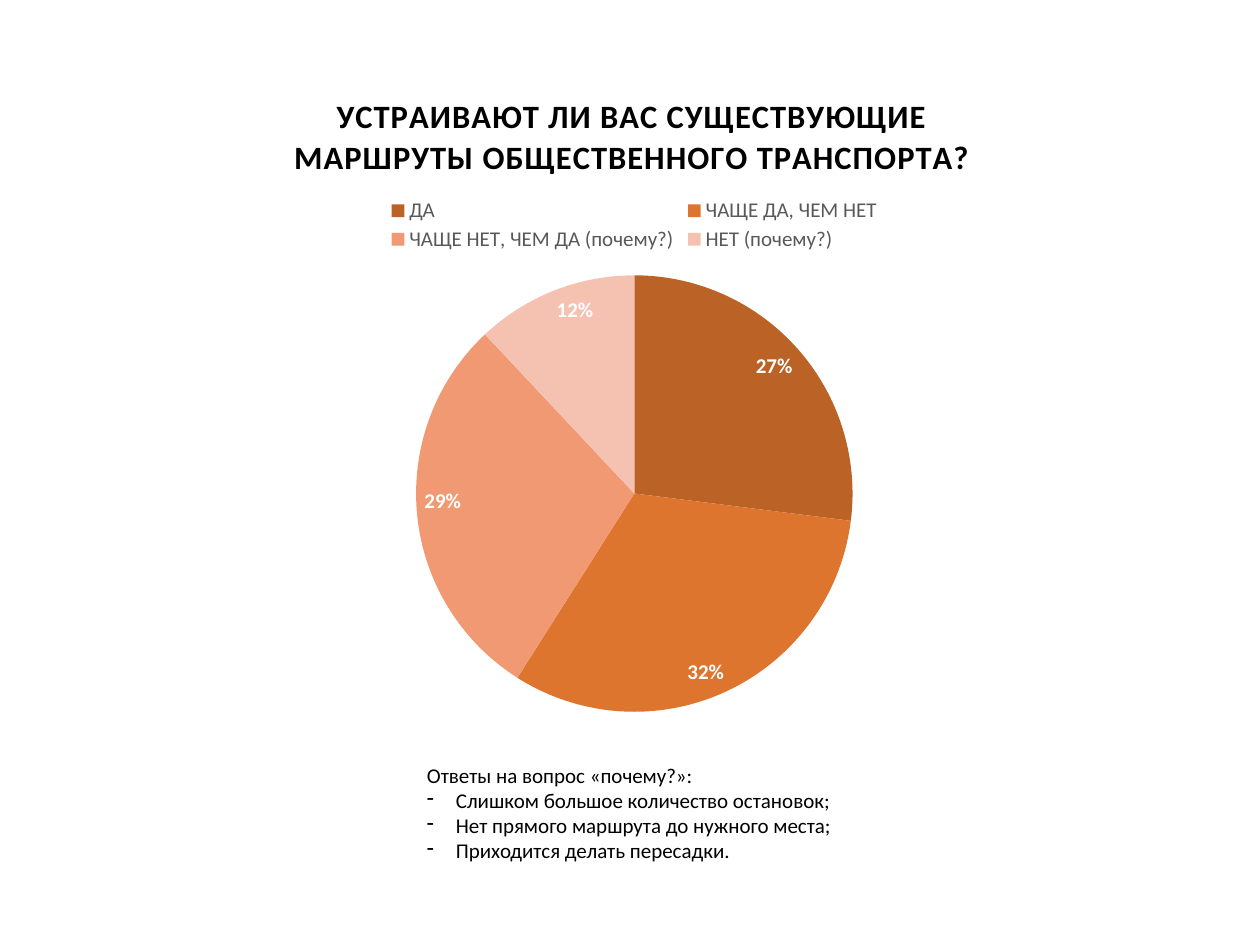
from typing import NamedTuple

from lxml.etree import SubElement
from pptx import Presentation
from pptx.chart.data import CategoryChartData
from pptx.dml.color import RGBColor
from pptx.enum.chart import XL_CHART_TYPE as Kind
from pptx.enum.chart import XL_LABEL_POSITION as LabelPos
from pptx.enum.chart import XL_LEGEND_POSITION as LegendPos
from pptx.enum.text import MSO_AUTO_SIZE as Fit
from pptx.oxml.ns import qn
from pptx.util import Inches, Pt

FONT = "Calibri"
BLACK = RGBColor(0x00, 0x00, 0x00)
GREY = RGBColor(0x59, 0x59, 0x59)
WHITE = RGBColor(0xFF, 0xFF, 0xFF)
RUST = RGBColor(0xBB, 0x63, 0x27)
ORANGE = RGBColor(0xDE, 0x75, 0x2E)
SALMON = RGBColor(0xF0, 0x99, 0x73)
PINK = RGBColor(0xF5, 0xC2, 0xB1)

TITLE = "УСТРАИВАЮТ ЛИ ВАС СУЩЕСТВУЮЩИЕ МАРШРУТЫ ОБЩЕСТВЕННОГО ТРАНСПОРТА?"
LEAD = "Ответы на вопрос «почему?»:"
REASONS = [
    "Слишком большое количество остановок;",
    "Нет прямого маршрута до нужного места;",
    "Приходится делать пересадки.",
]


class Slice(NamedTuple):
    name: str
    share: int
    color: RGBColor


SLICES = [
    Slice("ДА", 27, RUST),
    Slice("ЧАЩЕ ДА, ЧЕМ НЕТ", 32, ORANGE),
    Slice("ЧАЩЕ НЕТ, ЧЕМ ДА (почему?)", 29, SALMON),
    Slice("НЕТ (почему?)", 12, PINK),
]


def style(font, size: float, color: RGBColor, bold: bool = False) -> None:
    font.name, font.size, font.bold = FONT, Pt(size), bold
    font.color.rgb = color


def place(part, index: int, inner: bool = False, **sides: float) -> None:
    """Fix a chart part at fractions of the chart frame."""
    old = part.find(qn("c:layout"))
    if old is not None:
        part.remove(old)
    layout = part.makeelement(qn("c:layout"))
    part.insert(index, layout)
    manual = SubElement(layout, qn("c:manualLayout"))
    if inner:
        SubElement(manual, qn("c:layoutTarget"), val="inner")
    for side in ("x", "y"):
        SubElement(manual, qn(f"c:{side}Mode"), val="edge")
    for side, value in sides.items():
        SubElement(manual, qn(f"c:{side}"), val=str(value))


def add_pie(slide) -> None:
    data = CategoryChartData()
    data.categories = [s.name for s in SLICES]
    data.add_series("Series 1", [s.share for s in SLICES])
    chart = slide.shapes.add_chart(
        Kind.PIE, Inches(1.22), Inches(0.48), Inches(7.63), Inches(5.33), data
    ).chart
    style(chart.font, 10, BLACK)

    # Title
    chart.has_title = True
    title = chart.chart_title
    title.include_in_layout = False
    head = title.text_frame.paragraphs[0]
    run = head.add_run()
    run.text = TITLE
    style(head.font, 18.6, BLACK, True)
    style(run.font, 18.6, BLACK, True)
    run.font._element.set("spc", "50")
    place(title._element, 1, x=0.14, y=0.04)

    # Legend
    chart.has_legend = True
    legend = chart.legend
    legend.position = LegendPos.TOP
    legend.include_in_layout = False
    style(legend.font, 12, GREY)
    place(legend._element, 1, x=0.24, y=0.2, w=0.52, h=0.09)

    # Slices and their labels
    plot = chart.plots[0]
    plot.vary_by_categories = True
    for i, part in enumerate(SLICES):
        fill = plot.series[0].points[i].format.fill
        fill.solid()
        fill.fore_color.rgb = part.color
    labels = plot.series[0].data_labels
    labels.show_percentage = True
    labels.show_value = False
    labels.number_format, labels.number_format_is_linked = "0%", False
    labels.position = LabelPos.INSIDE_END
    style(labels.font, 12, WHITE, True)
    area = chart._chartSpace.chart.plotArea
    place(area, 0, inner=True, x=0.27, y=0.32, w=0.46, h=0.65)


def add_notes(slide) -> None:
    box = slide.shapes.add_textbox(Inches(3.29), Inches(6), Inches(4.4), Inches(0.91))
    frame = box.text_frame
    frame.word_wrap = True
    frame.auto_size = Fit.SHAPE_TO_FIT_TEXT
    lead = frame.paragraphs[0]
    lead.text = LEAD
    style(lead.font, 12, BLACK)
    for reason in REASONS:
        para = frame.add_paragraph()
        para.text = reason
        props = para._p.get_or_add_pPr()
        props.set("marL", str(Inches(0.23)))
        props.set("indent", str(-Inches(0.23)))
        SubElement(props, qn("a:buChar"), char="-")
        style(para.font, 12, BLACK)


def main() -> None:
    deck = Presentation()
    deck.slide_width, deck.slide_height = Inches(10), Inches(7.5)
    slide = deck.slides.add_slide(deck.slide_layouts[6])
    add_pie(slide)
    add_notes(slide)
    deck.save("out.pptx")


if __name__ == "__main__":
    main()
